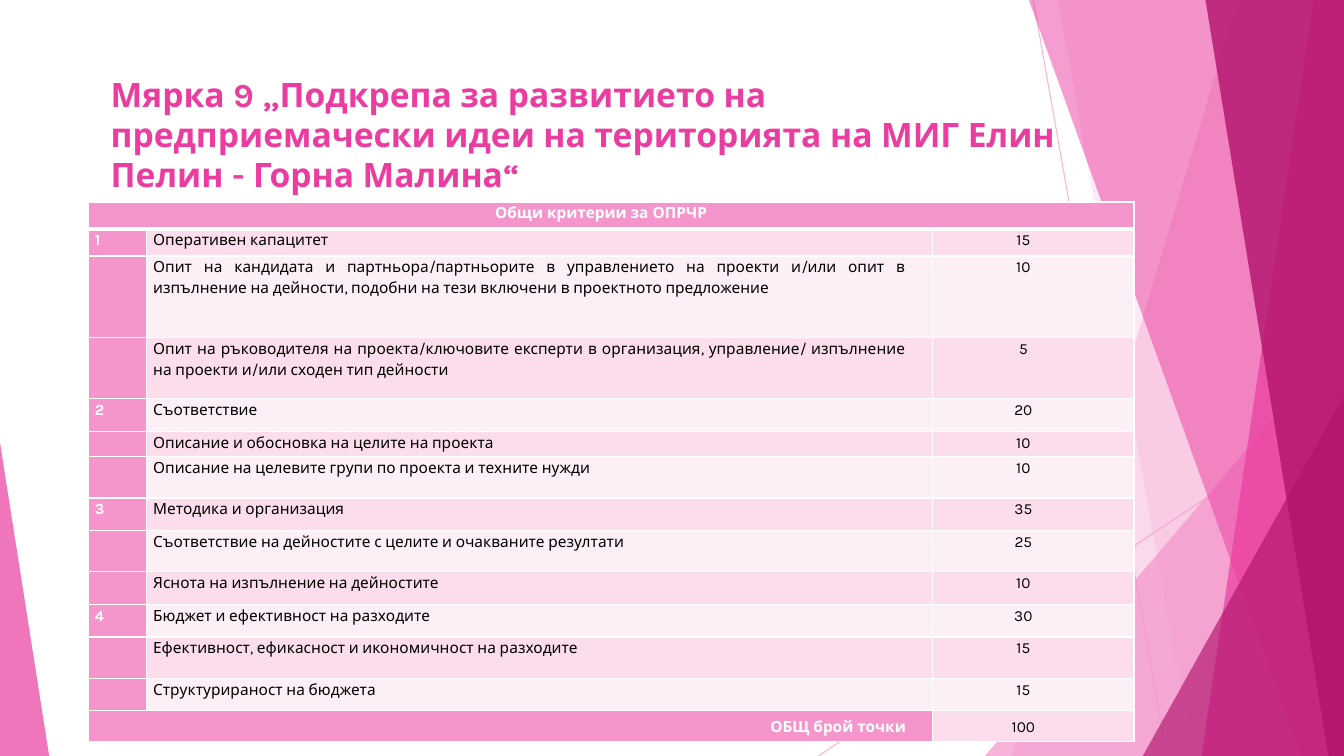
"""Build a slide with a scoring criteria table beside pink facets."""
from dataclasses import dataclass

from lxml.etree import SubElement as Sub
from pptx import Presentation
from pptx.dml.color import RGBColor as Rgb
from pptx.enum.shapes import MSO_CONNECTOR as Link, MSO_SHAPE as Form
from pptx.enum.text import MSO_ANCHOR as Anchor, PP_ALIGN as Align
from pptx.oxml.ns import qn
from pptx.util import Cm, Pt


@dataclass
class Theme:
    font: str = "Karla"
    head: int = 24
    body: int = 11
    rose: str = "F496CB"
    pink: str = "EB3D9F"
    plum: str = "B2136D"
    band: str = "FBDDEC"
    pale: str = "FDEFF6"
    white: str = "FFFFFF"
    black: str = "000000"


def tint(item, fill, hue, alpha):
    fill.solid()
    fill.fore_color.rgb = Rgb.from_string(hue)
    color = item._element.find(".//" + qn("a:srgbClr"))
    Sub(color, qn("a:alpha"), val=str(alpha * 1000))


def write(frame, text, size, hue, bold, align, space):
    para = frame.paragraphs[0]
    para.alignment, para.line_spacing = align, space
    if text:
        run = para.add_run()
        run.text = text
        look = {"name": theme.font, "size": Pt(size), "bold": bold}
        for key, value in look.items():
            setattr(run.font, key, value)
        run.font.color.rgb = Rgb.from_string(hue)
    else:
        Sub(para._p, qn("a:endParaRPr"), sz=str(size * 100))
    return para


theme = Theme()
wide, high = 33.87, 19.05
deck = Presentation()
deck.slide_width, deck.slide_height = Cm(wide), Cm(high)
slide = deck.slides.add_slide(deck.slide_layouts[6])
shapes = slide.shapes

for ends in ((26.04, 0, 29.41, high), (wide, 10.24, 20.62, high)):
    ray = shapes.add_connector(Link.STRAIGHT, *map(Cm, ends))
    ray.line.width = Pt(0.75)
    tint(ray, ray.line.fill, theme.rose, 70)
    Sub(ray._element.spPr, qn("a:effectLst"))

facets = [
    ((31.19, 25.5), theme.rose, 36),
    ((26.67, 30.05), theme.rose, 20),
    ((24.82, 8.46, 9.05, 1), theme.rose, 72),
    ((25.93, 32.79), theme.pink, 50),
    ((33.1, 30.28), theme.pink, 70),
    ((30.38, 33.48), theme.plum, 80),
    ((28.8, 9.98, 5.07, 1), theme.plum, 66),
    ((0, 11.15, 1.24, 0), theme.pink, 70),
]
for place, hue, alpha in facets:
    if len(place) == 2:
        crest, foot = place
        pen = shapes.build_freeform(Cm(crest), 0)
        edge = ((wide, 0), (wide, high), (foot, high))
        pen.add_line_segments([(Cm(x), Cm(y)) for x, y in edge])
        facet = pen.convert_to_shape()
    else:
        left, top, span, peak = place
        box = map(Cm, (left, top, span, high - top))
        facet = shapes.add_shape(Form.ISOSCELES_TRIANGLE, *box)
        facet.adjustments[0] = peak
    tint(facet, facet.fill, hue, alpha)
    facet.line.fill.background()
    facet.shadow.inherit = False

title = shapes.add_textbox(Cm(2.54), Cm(1.73), Cm(25.2), Cm(3.23)).text_frame
title.word_wrap = True
write(title, "Мярка 9 „Подкрепа за развитието на предприемачески идеи на "
      "територията на МИГ Елин Пелин - Горна Малина“",
      theme.head, theme.pink, True, Align.LEFT, 1.0)

rows = [
    (0.68, "Общи критерии за ОПРЧР", "", ""),
    (0.68, "1", "Оперативен капацитет", "15"),
    (2.06, "", "Опит на кандидата и партньора/партньорите в управлението на "
     "проекти и/или опит в изпълнение на дейности, подобни на тези включени "
     "в проектното предложение", "10"),
    (1.54, "", "Опит на ръководителя на проекта/ключовите експерти в "
     "организация, управление/ изпълнение на проекти и/или сходен тип "
     "дейности", "5"),
    (0.82, "2", "Съответствие", "20"),
    (0.64, "", "Описание и обосновка на целите на проекта", "10"),
    (1.04, "", "Описание на целевите групи по проекта и техните нужди", "10"),
    (0.82, "3", "Методика и организация", "35"),
    (1.04, "", "Съответствие на дейностите с целите и очакваните резултати",
     "25"),
    (0.82, "", "Яснота на изпълнение на дейностите", "10"),
    (0.82, "4", "Бюджет и ефективност на разходите", "30"),
    (1.04, "", "Ефективност, ефикасност и икономичност на разходите", "15"),
    (0.82, "", "Структурираност на бюджета", "15"),
    (0.78, "ОБЩ брой точки", "", "100"),
]
cols = (1.47, 19.81, 5.08)
last = len(rows) - 1
tall = sum(row[0] for row in rows)
grid = shapes.add_table(len(rows), len(cols), Cm(2.22), Cm(5.09),
                        Cm(sum(cols)), Cm(tall)).table
grid.first_row = grid.horz_banding = False
for col, size in zip(grid.columns, cols):
    col.width = Cm(size)
grid.cell(0, 0).merge(grid.cell(0, 2))
grid.cell(last, 0).merge(grid.cell(last, 1))

for r, (size, *texts) in enumerate(rows):
    grid.rows[r].height = Cm(size)
    for c, text in enumerate(texts):
        cell = grid.cell(r, c)
        lead = r == 0 or c == 0
        align = Align.CENTER if r == 0 or c == 2 else Align.JUSTIFY
        if r == last and c == 0:
            align = Align.RIGHT
        pad = {"margin_left": Cm(0.17), "margin_right": Cm(0.17),
               "margin_top": 0, "margin_bottom": 0,
               "vertical_anchor": Anchor.MIDDLE if r == last else Anchor.TOP}
        for key, value in pad.items():
            setattr(cell, key, value)
        para = write(cell.text_frame, text, theme.body,
                     theme.white if lead else theme.black, lead, align, 1.15)
        para._p.get_or_add_pPr().set("marR", str(Cm(0.5)))
        hue = theme.rose if lead else theme.band if r % 2 else theme.pale
        cell.fill.solid()
        cell.fill.fore_color.rgb = Rgb.from_string(hue)
        props = cell._tc.get_or_add_tcPr()
        for i, side in enumerate("LRTB"):
            thick = (r, side) in ((0, "B"), (1, "T"))
            line = Sub(props, qn("a:ln" + side), w=str(Pt(3 if thick else 1)))
            Sub(Sub(line, qn("a:solidFill")), qn("a:srgbClr"), val=theme.white)
            props.insert(i, line)

deck.save("out.pptx")
